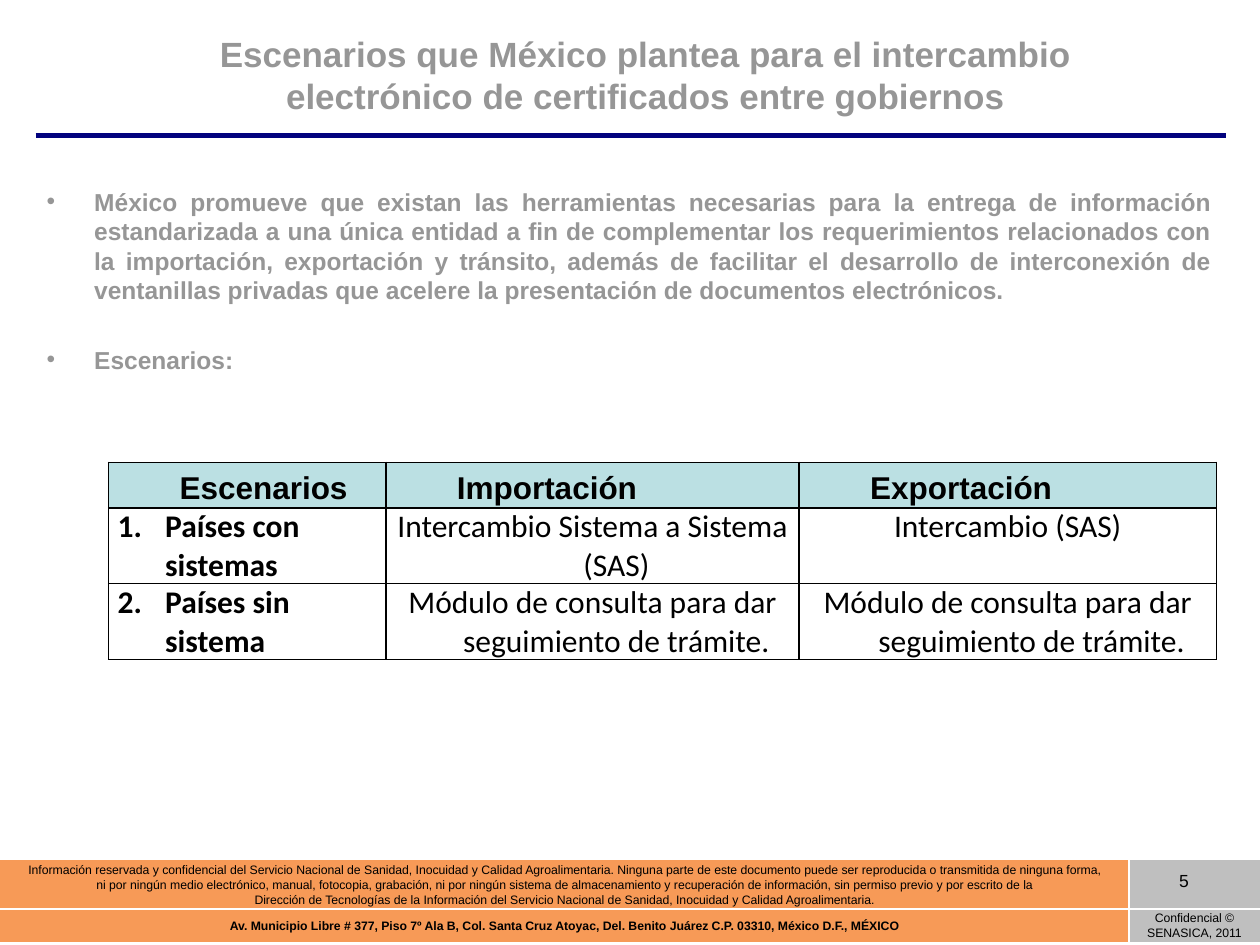
from dataclasses import dataclass
from lxml.etree import SubElement
from pptx import Presentation
from pptx.dml.color import RGBColor as Rgb
from pptx.enum.text import MSO_ANCHOR as Anchor, PP_ALIGN as Align
from pptx.oxml.ns import qn
from pptx.util import Cm, Pt


@dataclass(frozen=True)
class Theme:
    gray: str = "969696"
    navy: str = "02027E"
    aqua: str = "BBE0E3"
    orange: str = "F79A57"
    silver: str = "BFBFBF"
    black: str = "000000"
    white: str = "FFFFFF"
    sans: str = "Arial"
    serif: str = "Calibri"
    title: int = 20
    body: int = 14
    grid: int = 18
    page: int = 10
    small: int = 7


T = Theme()
HANG = 0.96


def style(para, size, color=T.black, bold=False, face=T.sans, align=Align.LEFT):
    para.alignment = align
    for run in para.runs:
        font = run.font
        font.name, font.size, font.bold = face, Pt(size), bold
        font.color.rgb = Rgb.from_string(color)


def indent(para, left, first=0):
    props = para._p.get_or_add_pPr()
    props.set("marL", str(Cm(left)))
    props.set("indent", str(Cm(first)))
    return props


def text_box(slide, box, lines, anchor=Anchor.TOP):
    frame = slide.shapes.add_textbox(*map(Cm, box)).text_frame
    frame.word_wrap = True
    frame.vertical_anchor = anchor
    frame.text = "\n".join(lines)
    return frame.paragraphs


def add_grid(slide, box, cols, rows):
    table = slide.shapes.add_table(len(rows), len(cols), *map(Cm, box)).table
    table.first_row = table.horz_banding = False
    for col, width in zip(table.columns, cols):
        col.width = Cm(width)
    for row, height in zip(table.rows, rows):
        row.height = Cm(height)
    return table


def fill_cell(cell, text, edge, width, fill=None, anchor=Anchor.TOP,
              sides="LRTB"):
    cell.margin_left = cell.margin_right = Cm(0.18)
    cell.margin_top = cell.margin_bottom = 0
    cell.vertical_anchor = anchor
    props = cell._tc.get_or_add_tcPr()
    for side in "LRTB":
        line = SubElement(props, qn(f"a:ln{side}"), w=str(Pt(width)))
        if side in sides:
            paint = SubElement(line, qn("a:solidFill"))
            SubElement(paint, qn("a:srgbClr"), val=edge)
        else:
            SubElement(line, qn("a:noFill"))
    if fill:
        cell.fill.solid()
        cell.fill.fore_color.rgb = Rgb.from_string(fill)
    else:
        cell.fill.background()
    cell.text = text
    return cell.text_frame.paragraphs


# Title with the ruled table below it
def add_title(slide, box):
    x, y, w, h = box
    bar = 0.34
    table = add_grid(slide, (x, y + h - bar, w, bar), (w,), (bar,))
    blank = fill_cell(table.cell(0, 0), "", T.navy, 3, sides="B")[0]
    SubElement(blank._p, qn("a:endParaRPr"), sz="300")
    text = ("Escenarios que México plantea para el intercambio "
            "electrónico de certificados entre gobiernos")
    head = text_box(slide, (x + 2.87, y, 18.85, 2.31), [text], Anchor.MIDDLE)[0]
    style(head, T.title, T.gray, True, align=Align.CENTER)


# Bulleted text
def add_body(slide, box):
    lines = [
        "México promueve que existan las herramientas necesarias para la "
        "entrega de información estandarizada a una única entidad a fin de "
        "complementar los requerimientos relacionados con la importación, "
        "exportación y tránsito, además de facilitar el desarrollo de "
        "interconexión de ventanillas privadas que acelere la presentación "
        "de documentos electrónicos.",
        "Escenarios:",
    ]
    paras = text_box(slide, box, lines)
    for para in paras:
        props = indent(para, HANG, -HANG)
        SubElement(props, qn("a:buFont"), typeface=T.sans)
        SubElement(props, qn("a:buChar"), char="•")
        style(para, T.body, T.gray, True, align=Align.JUSTIFY)
    paras[1].space_before = Pt(23)


# Table of scenarios
def add_cases(slide, box):
    query = "Módulo de consulta para dar seguimiento de trámite."
    data = [
        ("Escenarios", "Importación", "Exportación"),
        ("Países con sistemas", "Intercambio Sistema a Sistema (SAS)",
         "Intercambio (SAS)"),
        ("2.\tPaíses sin sistema", query, query),
    ]
    table = add_grid(slide, box, (5.59, 8.33, 8.41), (0.92, 1.52, 1.52))
    for r, row in enumerate(data):
        for c, text in enumerate(row):
            top, first = r == 0, c == 0
            para = fill_cell(table.cell(r, c), text, T.black, 1,
                             T.aqua if top else None,
                             Anchor.MIDDLE if top else Anchor.TOP)[0]
            if top:
                indent(para, 1.25)
                para.line_spacing = 1.2
                style(para, T.grid, bold=True, align=Align.JUSTIFY)
                continue
            props = indent(para, HANG, -HANG)
            if first and r == 1:
                SubElement(props, qn("a:buAutoNum"), type="arabicPeriod")
            style(para, T.grid, bold=first, face=T.serif,
                  align=Align.LEFT if first else Align.CENTER)


# Footer band with the page number
def add_footer(slide, box):
    x, y, w, h = box
    side = 2.64
    notice = "\n".join([
        "Información reservada y confidencial del Servicio Nacional de "
        "Sanidad, Inocuidad y Calidad Agroalimentaria. Ninguna parte de este "
        "documento puede ser reproducida o transmitida de ninguna forma,",
        "ni por ningún medio electrónico, manual, fotocopia, grabación, ni por "
        "ningún sistema de almacenamiento y recuperación de información, sin "
        "permiso previo y por escrito de la",
        "Dirección de Tecnologías de la Información del Servicio Nacional de "
        "Sanidad, Inocuidad y Calidad Agroalimentaria.",
    ])
    place = ("Av. Municipio Libre # 377, Piso 7º Ala B, Col. Santa Cruz Atoyac, "
             "Del. Benito Juárez C.P. 03310, México D.F., MÉXICO")
    data = [(notice, ""), (place, "Confidencial © SENASICA, 2011")]
    table = add_grid(slide, box, (w - side, side), (0.99, h - 0.99))
    for r, row in enumerate(data):
        for c, text in enumerate(row):
            fill = T.silver if c else T.orange
            inner = "RL"[c] + "BT"[r]
            for para in fill_cell(table.cell(r, c), text, T.white, 1.5,
                                  fill, Anchor.MIDDLE, inner):
                para.line_spacing = 1.1
                style(para, T.small, bold=text == place, align=Align.CENTER)
    page = text_box(slide, (x + w - 1.88, y + 0.08, 1.19, 0.79), ["5"])[0]
    style(page, T.page)


def main():
    deck = Presentation()
    deck.slide_width, deck.slide_height = Cm(25.4), Cm(19.05)
    slide = deck.slides.add_slide(deck.slide_layouts[6])
    add_title(slide, (0.72, 0.34, 24, 2.39))
    add_body(slide, (0.69, 3.64, 24, 4.09))
    add_cases(slide, (2.19, 9.32, 22.33, 3.96))
    add_footer(slide, (0, 17.34, 25.4, 1.63))
    deck.save("out.pptx")


if __name__ == "__main__":
    main()
